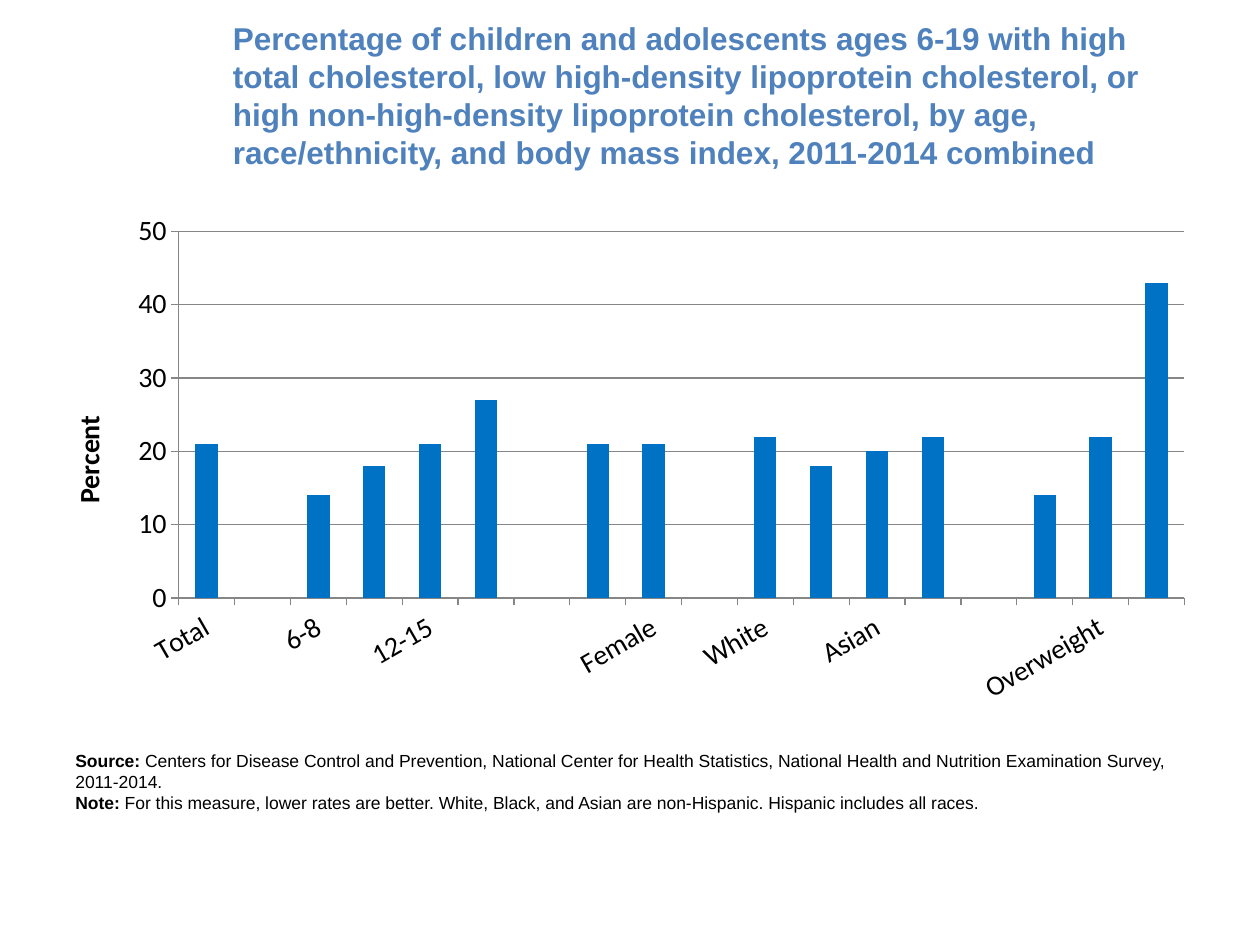
from dataclasses import dataclass

from lxml import etree
from pptx import Presentation
from pptx import util as u
from pptx.chart.data import CategoryChartData
from pptx.dml.color import RGBColor
from pptx.enum import chart as charts, text
from pptx.oxml.ns import qn


@dataclass(frozen=True)
class Theme:
    heading: RGBColor = RGBColor(0x4F, 0x81, 0xBD)
    ink: RGBColor = RGBColor(0, 0, 0)
    bar: RGBColor = RGBColor(0x00, 0x72, 0xC6)
    grid: RGBColor = RGBColor(0x86, 0x86, 0x86)
    text_font: str = "Arial"
    axis_font: str = "Calibri"
    title_size: int = 18
    axis_size: int = 16
    note_size: int = 10


THEME = Theme()

TITLE = (
    "Percentage of children and adolescents ages 6-19 with high total cholesterol, "
    "low high-density lipoprotein cholesterol, or high non-high-density lipoprotein "
    "cholesterol, by age, race/ethnicity, and body mass index, 2011-2014 combined"
)
NOTES = [
    ("Source: ", "Centers for Disease Control and Prevention, National Center for Health "
                 "Statistics, National Health and Nutrition Examination Survey, 2011-2014."),
    ("Note: ", "For this measure, lower rates are better. White, Black, and Asian are "
               "non-Hispanic. Hispanic includes all races."),
]
GROUPS = [
    [("Total", 21)],
    [("6-8", 14), ("9-11", 18), ("12-15", 21), ("16-19", 27)],
    [("Male", 21), ("Female", 21)],
    [("White", 22), ("Black", 18), ("Asian", 20), ("Hispanic", 22)],
    [("Normal Weight", 14), ("Overweight", 22), ("Obese", 43)],
]
PLOT_AREA = {"x": 0.102, "y": 0.055, "w": 0.887, "h": 0.677}


def style_font(font, size, color, name=THEME.text_font, bold=False):
    font.size = u.Pt(size)
    font.color.rgb = color
    font.name = name
    font.bold = bold


def add_text_box(slide, left, top, width, height, anchor=text.MSO_ANCHOR.TOP):
    box = slide.shapes.add_textbox(*map(u.Inches, (left, top, width, height)))
    box.text_frame.word_wrap = True
    box.text_frame.vertical_anchor = anchor
    return box.text_frame


def add_title(slide):
    frame = add_text_box(slide, 1.75, 0.17, 7.75, 1.17, text.MSO_ANCHOR.MIDDLE)
    frame.text = TITLE
    style_font(frame.paragraphs[0].runs[0].font, THEME.title_size, THEME.heading, bold=True)


def add_notes(slide):
    frame = add_text_box(slide, 0.5, 5.9, 9, 0.61)
    for index, parts in enumerate(NOTES):
        para = frame.add_paragraph() if index else frame.paragraphs[0]
        for part, bold in zip(parts, (True, False)):
            span = para.add_run()
            span.text = part
            style_font(span.font, THEME.note_size, THEME.ink, bold=bold)


def grouped_data():
    """Return the chart data with an empty category between groups."""
    data = CategoryChartData(number_format="0")
    values = []
    for index, group in enumerate(GROUPS):
        for label, value in ([("", None)] if index else []) + group:
            data.add_category(label)
            values.append(value)
    data.add_series("Series 1", values)
    return data


def set_plot_area(chart):
    """Fix the inner plot area as fractions of the chart."""
    plot_area = chart._chartSpace.chart.plotArea
    for old in plot_area.findall(qn("c:layout")):
        plot_area.remove(old)
    layout = etree.Element(qn("c:layout"))
    manual = etree.SubElement(layout, qn("c:manualLayout"))
    settings = {"layoutTarget": "inner", "xMode": "edge", "yMode": "edge", **PLOT_AREA}
    for name, value in settings.items():
        etree.SubElement(manual, qn(f"c:{name}")).set("val", str(value))
    plot_area.insert(0, layout)


def style_axis(axis):
    style_font(axis.tick_labels.font, THEME.axis_size, THEME.ink, THEME.axis_font)
    axis.major_tick_mark = charts.XL_TICK_MARK.OUTSIDE
    axis.minor_tick_mark = charts.XL_TICK_MARK.NONE
    axis.format.line.color.rgb = THEME.grid
    axis.format.line.width = u.Pt(0.75)


def style_value_axis(axis):
    style_axis(axis)
    axis.minimum_scale, axis.maximum_scale, axis.major_unit = 0, 50, 10
    axis.tick_labels.number_format = "0"
    axis.tick_labels.number_format_is_linked = False
    axis.has_major_gridlines = True
    axis.major_gridlines.format.line.color.rgb = THEME.grid
    axis.major_gridlines.format.line.width = u.Pt(0.75)
    frame = axis.axis_title.text_frame
    frame.text = "Percent"
    frame._txBody.bodyPr.set("rot", "-5400000")
    frame._txBody.bodyPr.set("vert", "horz")
    style_font(frame.paragraphs[0].runs[0].font, THEME.axis_size, THEME.ink,
               THEME.axis_font, bold=True)


def add_cholesterol_chart(slide):
    chart = slide.shapes.add_chart(
        charts.XL_CHART_TYPE.COLUMN_CLUSTERED,
        *map(u.Inches, (0.5, 1.6, 9, 4.3)), grouped_data()).chart
    style_font(chart.font, THEME.note_size, THEME.ink)
    chart.has_legend = False
    chart.has_title = False
    set_plot_area(chart)

    plot = chart.plots[0]
    plot.gap_width = 150
    plot.vary_by_categories = False
    fill = plot.series[0].format.fill
    fill.solid()
    fill.fore_color.rgb = THEME.bar

    style_axis(chart.category_axis)
    label_body = chart.category_axis._element.find(qn("c:txPr")).find(qn("a:bodyPr"))
    label_body.set("rot", "-1800000")
    style_value_axis(chart.value_axis)


def main():
    deck = Presentation()
    deck.slide_width, deck.slide_height = u.Inches(10), u.Inches(7.5)
    page = deck.slides.add_slide(deck.slide_layouts[6])
    add_title(page)
    add_cholesterol_chart(page)
    add_notes(page)
    deck.save("out.pptx")


if __name__ == "__main__":
    main()
